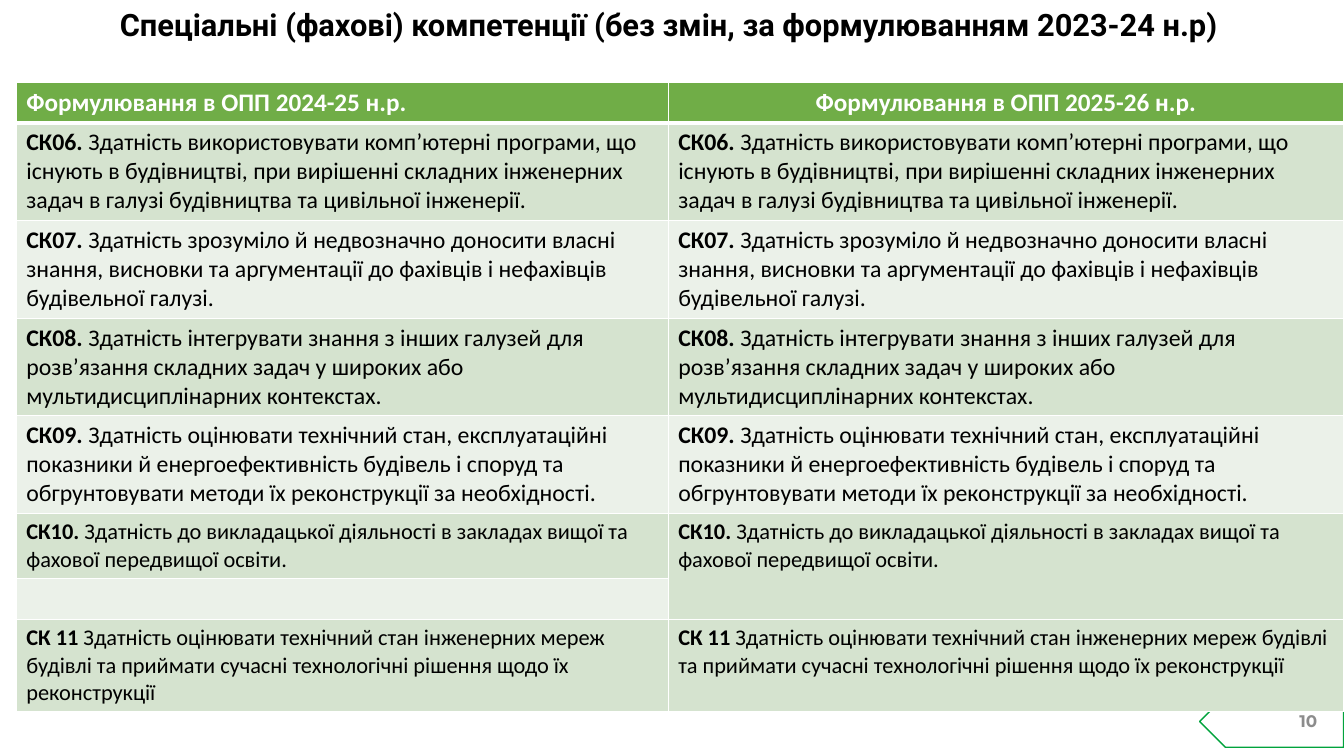
"""Build the slide comparing professional competences across two academic years."""
from lxml import etree
from pptx import Presentation
from pptx.dml.color import RGBColor
from pptx.enum.shapes import MSO_SHAPE as SHAPE
from pptx.enum.text import MSO_ANCHOR as ANCHOR, PP_ALIGN as ALIGN
from pptx.oxml.ns import qn
from pptx.util import Cm, Pt

COLORS = {"white": "FFFFFF", "black": "000000", "header": "70AD47", "dark": "D5E3CF",
          "light": "EBF1E9", "outline": "01A33C", "number": "8C8C8C"}


def add_run(p, text, color, **format_values):
    r = p.add_run()
    r.text = text
    r.font.color.rgb = RGBColor.from_string(COLORS[color])
    for name, value in format_values.items():
        setattr(r.font, name, value)


def style_cell(cell, fill, bottom=1, top=1):
    tc_pr = cell._tc.get_or_add_tcPr()
    for side, width in {"L": 1, "R": 1, "T": top, "B": bottom}.items():
        ln = etree.SubElement(tc_pr, qn(f"a:ln{side}"), w=str(Pt(width)))
        solid = etree.SubElement(ln, qn("a:solidFill"))
        etree.SubElement(solid, qn("a:srgbClr"), val=COLORS["white"])
    cell.fill.solid()
    cell.fill.fore_color.rgb = RGBColor.from_string(COLORS[fill])


prs = Presentation()
prs.slide_width, prs.slide_height = Cm(33.87), Cm(19.05)
s = prs.slides.add_slide(prs.slide_layouts[6])

sp = s.shapes.add_shape(SHAPE.PENTAGON, Cm(30.23), Cm(17.53), Cm(3.63), Cm(1.3))
sp.rotation = 180
sp.shadow.inherit = False
sp.fill.solid()
sp.fill.fore_color.rgb = RGBColor.from_string(COLORS["white"])
sp.line.color.rgb = RGBColor.from_string(COLORS["outline"])
sp.line.width = Pt(1)

LABELS = [
    ("Спеціальні (фахові) компетенції (без змін, за формулюванням 2023-24 н.р) ",
     (2.34, -1.17, 29.21, 3.68), ALIGN.CENTER, 0.9, "black", "Roboto", 22),
    ("10", (25.83, 17.65, 7.62, 1.02), ALIGN.RIGHT, 1, "number", "Montserrat", 12),
]
for text, box, align, spacing, color, font, size in LABELS:
    tf = s.shapes.add_textbox(*map(Cm, box)).text_frame
    tf.word_wrap = True
    tf.vertical_anchor = ANCHOR.MIDDLE
    p = tf.paragraphs[0]
    p.alignment, p.line_spacing = align, spacing
    add_run(p, text, color, name=font, size=Pt(size), bold=True)

HEADERS = [("Формулювання в ОПП 2024-25 н.р.", ALIGN.LEFT),
           ("Формулювання в ОПП 2025-26 н.р.", ALIGN.CENTER)]
COMPETENCES = [
    ("СК06.", "Здатність використовувати комп’ютерні програми, що існують в будівництві, "
     "при вирішенні складних інженерних задач в галузі будівництва та цивільної інженерії.", 17),
    ("СК07.", "Здатність зрозуміло й недвозначно доносити власні знання, висновки та "
     "аргументації до фахівців і нефахівців будівельної галузі.", 17),
    ("СК08.", "Здатність інтегрувати знання з інших галузей для розв’язання складних задач "
     "у широких або мультидисциплінарних контекстах.", 17),
    ("СК09.", "Здатність оцінювати технічний стан, експлуатаційні показники й "
     "енергоефективність будівель і споруд та обгрунтовувати методи їх реконструкції "
     "за необхідності.", 17),
    ("СК10.", "Здатність до викладацької діяльності в закладах вищої та фахової "
     "передвищої освіти.", 16),
    None,
    ("СК 11", "Здатність оцінювати технічний стан інженерних мереж будівлі та приймати "
     "сучасні технологічні рішення щодо їх реконструкції", 16),
]
COL_WIDTHS = [16.43, 17.02]
ROW_HEIGHTS = [1.02, 2.46, 2.46, 2.46, 2.46, 1.64, 1.03, 2.32]

table = s.shapes.add_table(len(ROW_HEIGHTS), len(COL_WIDTHS), Cm(0.41), Cm(2.08),
                           Cm(sum(COL_WIDTHS)), Cm(sum(ROW_HEIGHTS))).table
for column, width in zip(table.columns, COL_WIDTHS):
    column.width = Cm(width)
for row, height in zip(table.rows, ROW_HEIGHTS):
    row.height = Cm(height)

for col, (text, align) in enumerate(HEADERS):
    cell = table.cell(0, col)
    style_cell(cell, "header", bottom=3)
    p = cell.text_frame.paragraphs[0]
    p.alignment = align
    add_run(p, text, "white", name="Calibri", size=Pt(18), bold=True)

for row, competence in enumerate(COMPETENCES, 1):
    for col in range(len(COL_WIDTHS)):
        cell = table.cell(row, col)
        style_cell(cell, "dark" if row % 2 else "light", top=3 if row == 1 else 1)
        if competence:
            code, text, size = competence
            p = cell.text_frame.paragraphs[0]
            add_run(p, code + " ", "black", name="Calibri", size=Pt(size), bold=True)
            add_run(p, text, "black", name="Calibri", size=Pt(size), bold=False)
table.cell(5, 1).merge(table.cell(6, 1))

prs.save("out.pptx")
